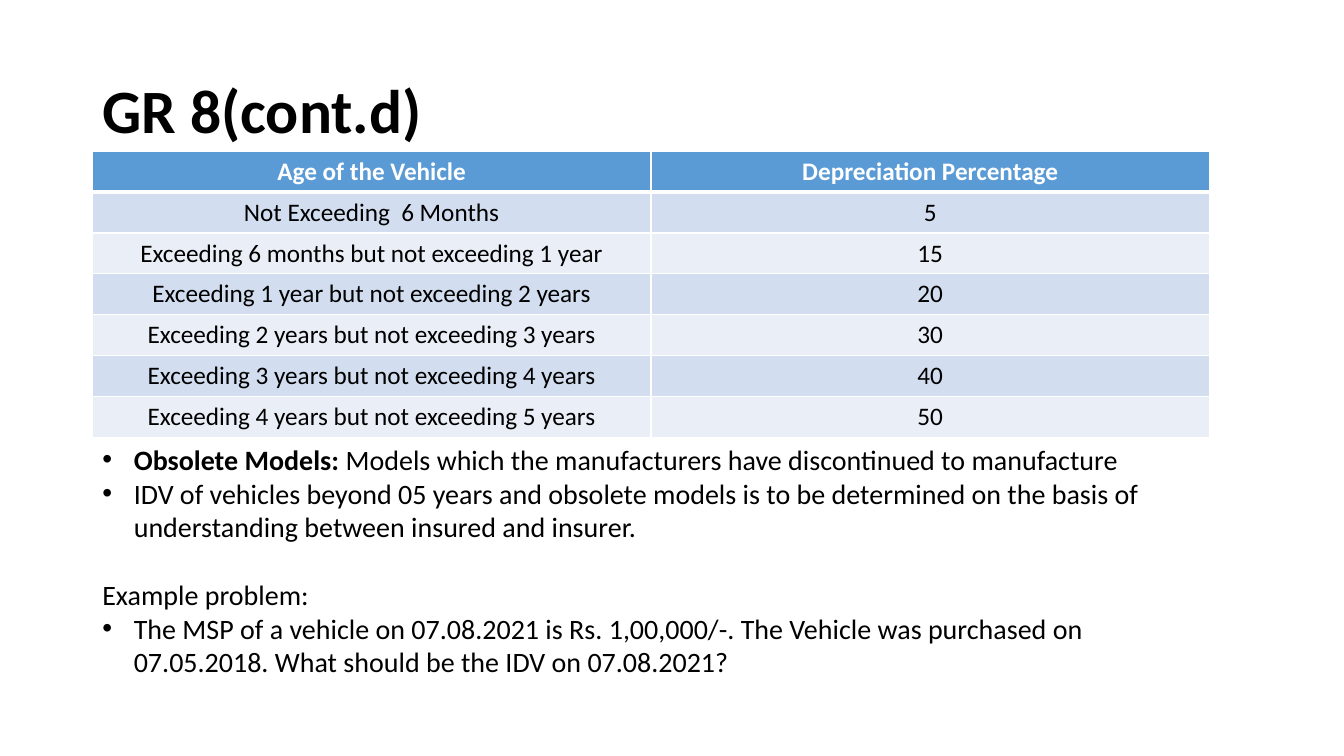
from lxml import etree
from pptx import Presentation
from pptx.dml.color import RGBColor
from pptx.enum.text import MSO_ANCHOR, PP_ALIGN
from pptx.oxml.ns import qn
from pptx.util import Pt

CENTER, LEFT = PP_ALIGN.CENTER, PP_ALIGN.LEFT
MIDDLE, TOP = MSO_ANCHOR.MIDDLE, MSO_ANCHOR.TOP

# Content
TITLE = "GR 8(cont.d)"
ROWS = [
    ("Age of the Vehicle", "Depreciation Percentage"),
    ("Not Exceeding  6 Months", "5"),
    ("Exceeding 6 months but not exceeding 1 year", "15"),
    ("Exceeding 1 year but not exceeding 2 years", "20"),
    ("Exceeding 2 years but not exceeding 3 years", "30"),
    ("Exceeding 3 years but not exceeding 4 years", "40"),
    ("Exceeding 4 years but not exceeding 5 years", "50"),
]
# Each note: bold lead, plain text, bulleted, space before
NOTES = [
    ("Obsolete Models: ", "Models which the manufacturers have discontinued to manufacture", True, 0),
    ("", "IDV of vehicles beyond 05 years and obsolete models is to be determined "
         "on the basis of understanding between insured and insurer.", True, 0),
    ("", "Example problem:", False, 24.4),
    ("", "The MSP of a vehicle on 07.08.2021 is Rs. 1,00,000/-. The Vehicle was purchased "
         "on 07.05.2018. What should be the IDV on 07.08.2021?", True, 0),
]

# Layout and formats
COLORS = {"text": "000000", "white": "FFFFFF", "header": "5B9BD5",
          "odd": "D2DEEF", "even": "EAEFF7"}
FONT = "Calibri"
MARGIN = 66
TITLE_BOX = (MARGIN, 28.75, 828, 104.4)
TABLE_TOP, COLUMN_WIDTH, ROW_HEIGHT = 108, 399, 29.2
NOTES_BOX = (MARGIN, 312.6, 798.5, 177)
BULLET_INDENT = 22.5


def add_run(paragraph, text, size, bold=False, color="text"):
    run = paragraph.add_run()
    run.text = text
    formats = {"name": FONT, "size": Pt(size), "bold": bold}
    for name, value in formats.items():
        setattr(run.font, name, value)
    run.font.color.rgb = RGBColor.from_string(COLORS[color])


def add_text_frame(slide, box, anchor):
    frame = slide.shapes.add_textbox(*map(Pt, box)).text_frame
    frame.word_wrap = True
    frame.vertical_anchor = anchor
    return frame


def add_bullet(paragraph):
    properties = paragraph._p.get_or_add_pPr()
    properties.set("marL", str(Pt(BULLET_INDENT)))
    properties.set("indent", str(-Pt(BULLET_INDENT)))
    etree.SubElement(properties, qn("a:buFont")).set("typeface", "Arial")
    etree.SubElement(properties, qn("a:buChar")).set("char", "•")


def add_borders(cell, widths):
    properties = cell._tc.get_or_add_tcPr()
    for side, width in widths.items():
        line = etree.SubElement(properties, qn("a:" + side), w=str(Pt(width)))
        fill = etree.SubElement(line, qn("a:solidFill"))
        etree.SubElement(fill, qn("a:srgbClr"), val=COLORS["white"])


presentation = Presentation()
presentation.slide_width, presentation.slide_height = Pt(960), Pt(540)
slide = presentation.slides.add_slide(presentation.slide_layouts[6])

# Title
paragraph = add_text_frame(slide, TITLE_BOX, MIDDLE).paragraphs[0]
paragraph.line_spacing = 0.9
add_run(paragraph, TITLE, 44, bold=True)

# Depreciation table
column_count = len(ROWS[0])
table = slide.shapes.add_table(
    len(ROWS), column_count, Pt(MARGIN), Pt(TABLE_TOP),
    Pt(COLUMN_WIDTH * column_count), Pt(ROW_HEIGHT * len(ROWS))).table
for row_index, row in enumerate(ROWS):
    is_header = row_index == 0
    fill_name = "header" if is_header else ("even", "odd")[row_index % 2]
    borders = {"lnL": 1, "lnR": 1, "lnT": 3 if row_index == 1 else 1,
               "lnB": 3 if is_header else 1}
    for column_index, text in enumerate(row):
        cell = table.cell(row_index, column_index)
        add_borders(cell, borders)
        cell.fill.solid()
        cell.fill.fore_color.rgb = RGBColor.from_string(COLORS[fill_name])
        paragraph = cell.text_frame.paragraphs[0]
        paragraph.alignment = CENTER
        add_run(paragraph, text, 18, is_header, "white" if is_header else "text")

# Notes and example
frame = add_text_frame(slide, NOTES_BOX, TOP)
for index, (lead, text, bulleted, space_before) in enumerate(NOTES):
    paragraph = frame.add_paragraph() if index else frame.paragraphs[0]
    paragraph.alignment = LEFT
    paragraph.space_before = Pt(space_before)
    if bulleted:
        add_bullet(paragraph)
    if lead:
        add_run(paragraph, lead, 20, bold=True)
    add_run(paragraph, text, 20)

presentation.save("out.pptx")
